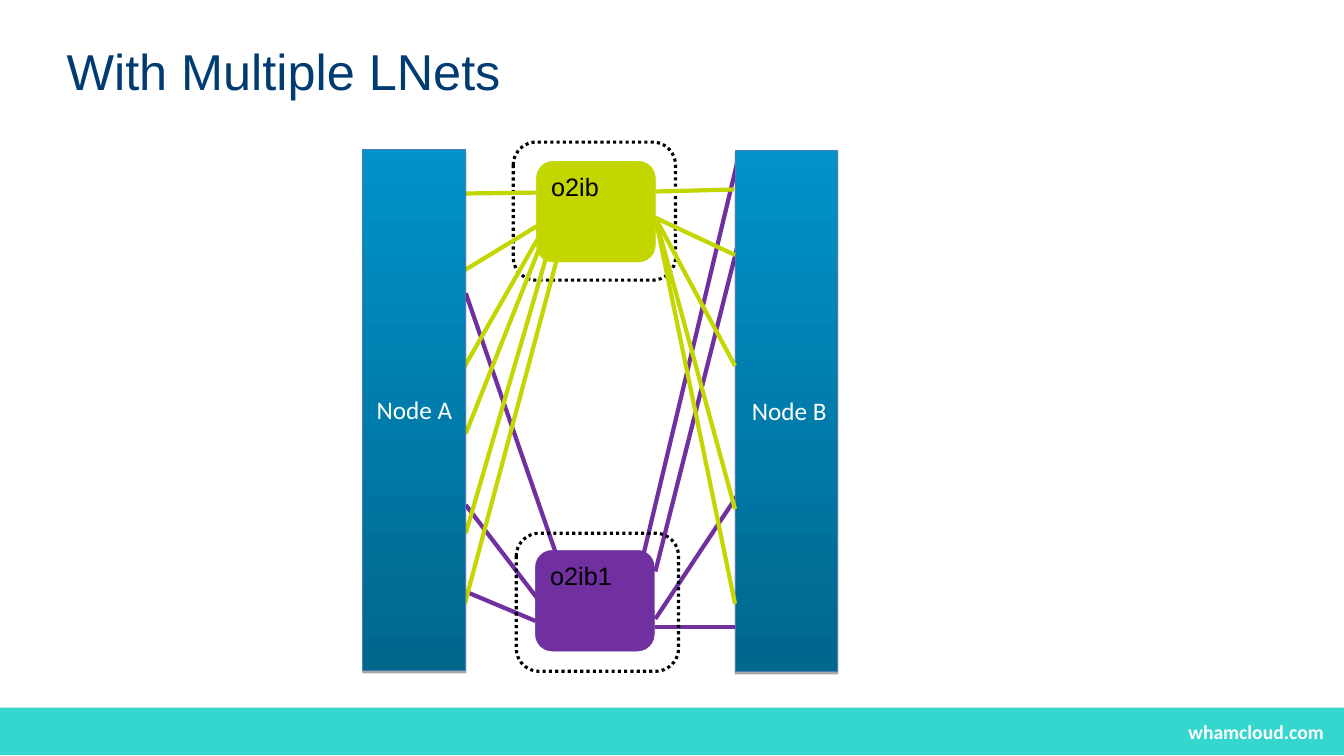
from pptx import Presentation
from pptx.dml.color import RGBColor
from pptx.enum.dml import MSO_LINE
from pptx.enum.shapes import MSO_CONNECTOR, MSO_SHAPE
from pptx.enum.text import MSO_ANCHOR, PP_ALIGN
from pptx.oxml import parse_xml
from pptx.oxml.ns import nsdecls, qn
from pptx.util import Pt
from lxml import etree

RECT = MSO_SHAPE.RECTANGLE
ROUND = MSO_SHAPE.ROUNDED_RECTANGLE
LINE = MSO_CONNECTOR.STRAIGHT
DOT = MSO_LINE.ROUND_DOT
TOP, MIDDLE = MSO_ANCHOR.TOP, MSO_ANCHOR.MIDDLE
LEFT, CENTER, RIGHT = PP_ALIGN.LEFT, PP_ALIGN.CENTER, PP_ALIGN.RIGHT

WHITE = RGBColor(0xFF, 0xFF, 0xFF)
BLACK = RGBColor(0, 0, 0)
NAVY = RGBColor(0x00, 0x3C, 0x71)
TEAL = RGBColor(0x34, 0xD6, 0xCE)
PURPLE = RGBColor(0x70, 0x30, 0xA0)
LIME = RGBColor(0xC3, 0xD6, 0x00)
DEEP = RGBColor(0x00, 0x67, 0x8D)
BRIGHT = RGBColor(0x00, 0x92, 0xC9)
EDGE = RGBColor(0x4A, 0x7E, 0xBB)

PX = 9144
SHADOW = (
    f'<a:outerShdw {nsdecls("a")} blurRad="0" dist="22860" dir="5400000" rotWithShape="0">'
    '<a:srgbClr val="000000"><a:alpha val="35000"/></a:srgbClr></a:outerShdw>'
)

deck = Presentation()
deck.slide_width = 1333 * PX
deck.slide_height = 750 * PX
slide = deck.slides.add_slide(deck.slide_layouts[5])
shapes = slide.shapes


def add_box(kind, left, top, width, height):
    box = shapes.add_shape(kind, left * PX, top * PX, width * PX, height * PX)
    box.shadow.inherit = False
    return box


def write(frame, text, size, font, color, align, anchor):
    frame.word_wrap = True
    frame.vertical_anchor = anchor
    para = frame.paragraphs[0]
    para.text = text
    para.alignment = align
    para.font.size = Pt(size)
    para.font.name = font
    para.font.color.rgb = color
    return para


title = shapes.title
title.left, title.top, title.width, title.height = 66 * PX, 38 * PX, 1200 * PX, 64 * PX
frame = title.text_frame
frame.margin_left = frame.margin_right = frame.margin_top = frame.margin_bottom = 0
write(frame, "With Multiple LNets", 36, "Arial", NAVY, LEFT, MIDDLE)

band = add_box(RECT, 0, 702, 1333, 47)
band.fill.solid()
band.fill.fore_color.rgb = TEAL
band.line.fill.background()
site = shapes.add_textbox(1126 * PX, 709 * PX, 197 * PX, 33 * PX)
para = write(site.text_frame, "whamcloud.com", 14, "Calibri", WHITE, RIGHT, TOP)
para.font.bold = True
site.text_frame.word_wrap = False

low_links = [
    (731, 622, 650, 622), (534, 595, 462, 501), (531, 616, 462, 587),
    (462, 291, 559, 571), (731, 492, 650, 614), (731, 246, 650, 567),
    (731, 162, 638, 551),
]
left_links = [
    (460, 192, 538, 191), (461, 268, 543, 218), (460, 365, 535, 234),
    (462, 430, 535, 246), (462, 529, 543, 251), (461, 599, 554, 251),
]
right_links = [(650, 190, 728, 188)] + [(650, 216, 729, y) for y in (253, 363, 505, 599)]

steps = [
    ("links", low_links, PURPLE),
    ("ring", 512, 529),
    ("net", 531, 546, "o2ib1", PURPLE),
    ("ring", 509, 141),
    ("links", left_links, LIME),
    ("node", 360, 148, "Node A"),
    ("net", 532, 160, "o2ib", LIME),
    ("node", 729, 149, " Node B"),
    ("links", right_links, LIME),
]

for kind, *args in steps:
    if kind == "links":
        ends, color = args
        for points in ends:
            link = shapes.add_connector(LINE, *[n * PX for n in points])
            link.line.color.rgb = color
            link.line.width = Pt(3)
            etree.SubElement(link._element.spPr, qn("a:effectLst"))
    elif kind == "ring":
        ring = add_box(ROUND, *args, 161, 137)
        ring.fill.background()
        ring.line.color.rgb = BLACK
        ring.line.width = Pt(2.25)
        ring.line.dash_style = DOT
    elif kind == "net":
        left, top, name, color = args
        net = add_box(ROUND, left, top, 118, 100)
        net.fill.solid()
        net.fill.fore_color.rgb = color
        net.line.color.rgb = color
        net.line.width = Pt(0.25)
        write(net.text_frame, name, 18, "Arial", BLACK, LEFT, TOP)
    else:
        left, top, name = args
        node = add_box(RECT, left, top, 102, 517)
        node.fill.gradient()
        node.fill.gradient_angle = 90
        for stop, color in zip(node.fill.gradient_stops, (DEEP, BRIGHT)):
            stop.color.rgb = color
        node.line.color.rgb = EDGE
        node.line.width = Pt(0.75)
        node._element.spPr.find(qn("a:effectLst")).append(parse_xml(SHADOW))
        write(node.text_frame, name, 18, "Calibri", WHITE, CENTER, MIDDLE)

deck.save("out.pptx")
